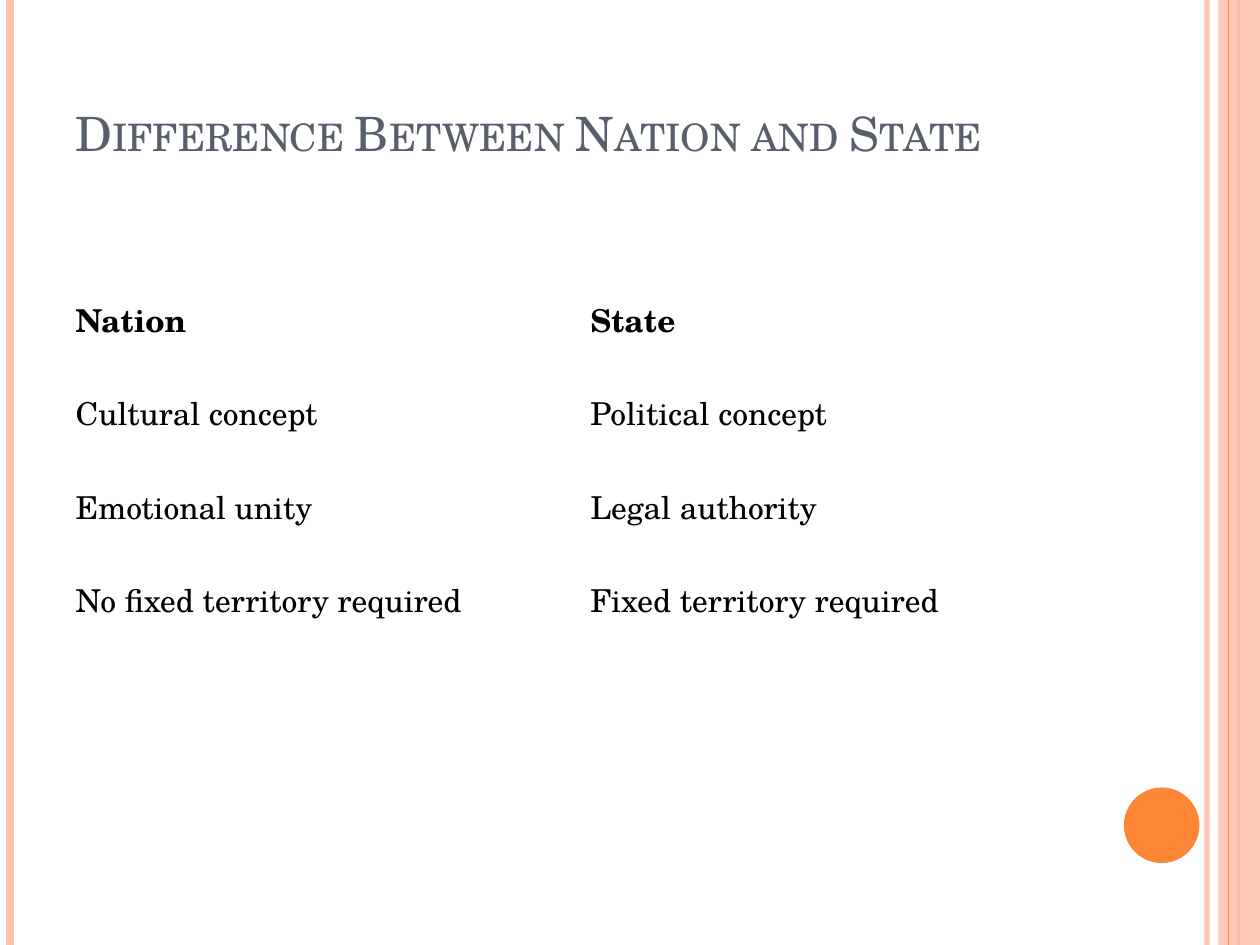
from dataclasses import dataclass

from lxml.etree import SubElement
from pptx import Presentation
from pptx.dml.color import RGBColor
from pptx.enum.shapes import MSO_CONNECTOR as Connector, MSO_SHAPE as Shape
from pptx.enum.text import MSO_ANCHOR as Anchor, PP_ALIGN as Align
from pptx.oxml.ns import qn
from pptx.util import Inches, Pt

PEACH = RGBColor(0xFE, 0xC3, 0xAE)
ORANGE = RGBColor(0xFE, 0x86, 0x37)
SLATE = RGBColor(0x57, 0x5F, 0x6D)
BLACK = RGBColor(0, 0, 0)
FONT = "TeX Gyre Schola"
WIDTH, HEIGHT = Inches(10), Inches(7.5)
MARGIN, CONTENT_WIDTH = Inches(0.5), Inches(8.17)
ROW_HEIGHT = Inches(0.74)
COMPARISON = [
    ("Nation", "State"),
    ("Cultural concept", "Political concept"),
    ("Emotional unity", "Legal authority"),
    ("No fixed territory required", "Fixed territory required"),
]


@dataclass(frozen=True)
class Stripe:
    """A full-height line at a share of the slide's width."""
    x: float
    color: RGBColor
    weight: float
    opacity: int = 100


@dataclass(frozen=True)
class Ornament:
    """A filled shape with its box in inches."""
    kind: Shape
    box: tuple[float, float, float, float]
    color: RGBColor
    opacity: int = 100


ORNAMENTS = [
    Stripe(0.958, PEACH, 3, 93),
    Stripe(0.008, PEACH, 4.5),
    Stripe(0.983, ORANGE, 1.5),
    Ornament(Shape.RECTANGLE, (9.67, 0, 0.33, 7.5), PEACH, 87),
    Stripe(0.975, ORANGE, 0.75),
    Ornament(Shape.OVAL, (8.92, 6.25, 0.6, 0.6), ORANGE),
]


def paint(fill, color: RGBColor, opacity: int) -> None:
    """Fill with a solid colour at an opacity in percent."""
    fill.solid()
    fill.fore_color.rgb = color
    if opacity < 100:
        srgb = fill._xPr.find(".//" + qn("a:srgbClr"))
        SubElement(srgb, qn("a:alpha"), val=str(opacity * 1000))


def draw_stripe(slide, stripe: Stripe) -> None:
    """Draw one vertical stripe."""
    x = int(WIDTH * stripe.x)
    line = slide.shapes.add_connector(Connector.STRAIGHT, x, 0, x, HEIGHT)
    line.line.width = Pt(stripe.weight)
    paint(line.line.fill, stripe.color, stripe.opacity)
    SubElement(line._element.spPr, qn("a:effectLst"))


def draw_ornament(slide, ornament: Ornament) -> None:
    """Draw one borderless shape."""
    shape = slide.shapes.add_shape(ornament.kind, *map(Inches, ornament.box))
    shape.shadow.inherit = False
    shape.line.fill.background()
    paint(shape.fill, ornament.color, ornament.opacity)


def style_text(paragraph, size: float, color: RGBColor, bold: bool = False) -> None:
    """Set the font of a whole paragraph."""
    font = paragraph.font
    font.name, font.size, font.bold = FONT, Pt(size), bold
    font.color.rgb = color


def write_title(slide, text: str) -> None:
    """Place the small-caps title."""
    title = slide.shapes.title
    title.left, title.top = MARGIN, Inches(0.3)
    title.width, title.height = CONTENT_WIDTH, Inches(1.03)
    title.text_frame.vertical_anchor = Anchor.BOTTOM
    title.text_frame.text = text
    heading = title.text_frame.paragraphs[0]
    heading.alignment = Align.LEFT
    style_text(heading, 27, SLATE)
    heading.font._element.set("cap", "small")


def draw_comparison(slide, rows: list[tuple[str, str]]) -> None:
    """Draw the plain table with a bold first row."""
    table = slide.shapes.add_table(
        len(rows), len(rows[0]), MARGIN, Inches(2.17),
        CONTENT_WIDTH, ROW_HEIGHT * len(rows)).table
    table.first_row = table.horz_banding = False
    for r, row in enumerate(rows):
        for c, text in enumerate(row):
            cell = table.cell(r, c)
            cell.fill.background()
            cell.vertical_anchor = Anchor.MIDDLE
            cell.text = text
            style_text(cell.text_frame.paragraphs[0], 18, BLACK, bold=r == 0)


def main() -> None:
    """Build and save the slide."""
    deck = Presentation()
    deck.slide_width, deck.slide_height = WIDTH, HEIGHT
    slide = deck.slides.add_slide(deck.slide_layouts.get_by_name("Title Only"))
    for ornament in ORNAMENTS:
        draw = draw_stripe if isinstance(ornament, Stripe) else draw_ornament
        draw(slide, ornament)
    write_title(slide, "Difference Between Nation and State")
    draw_comparison(slide, COMPARISON)
    deck.save("out.pptx")


if __name__ == "__main__":
    main()
